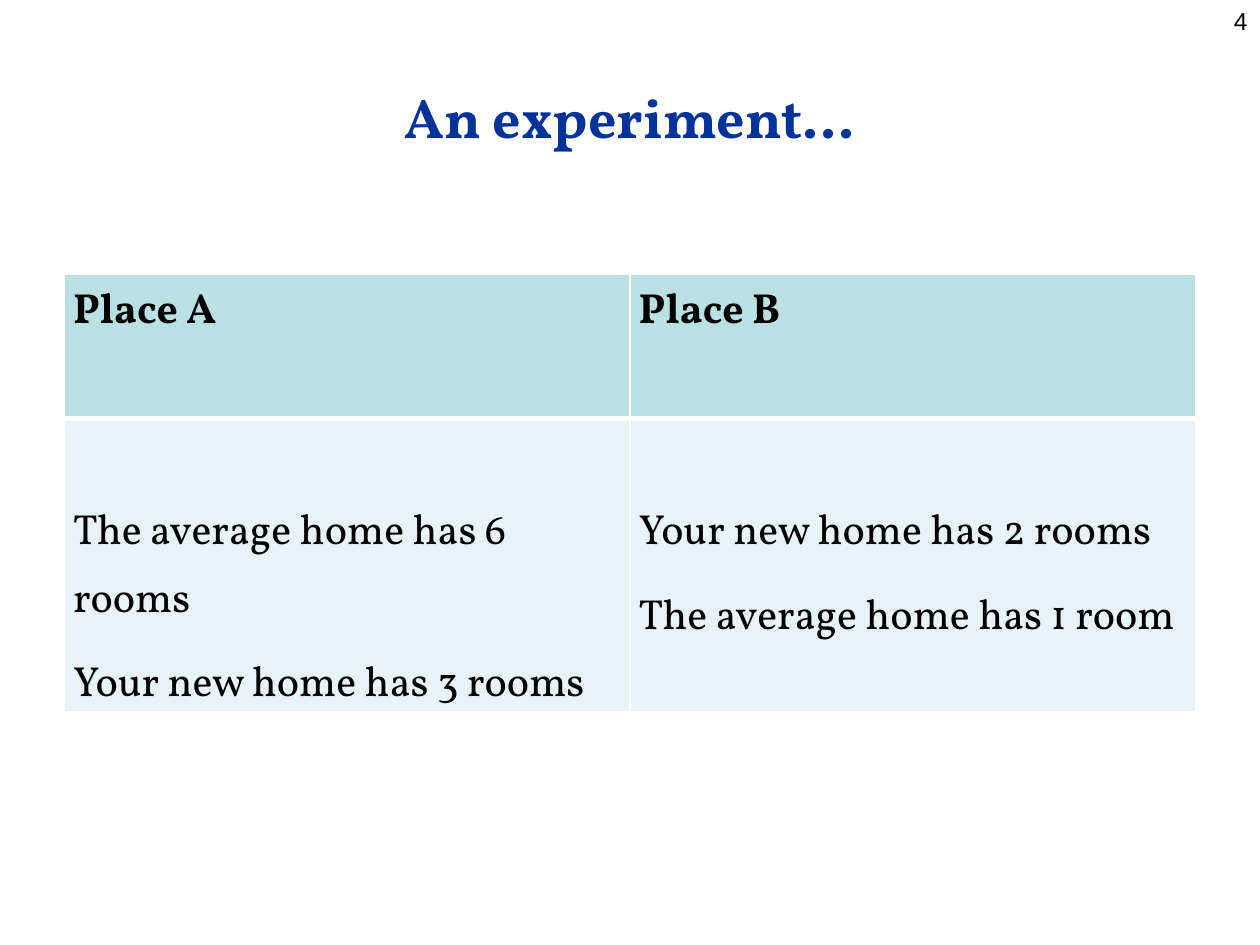
import pptx
import pptx.util
import pptx.dml.color
import pptx.enum.text
import pptx.oxml
import pptx.oxml.ns
from pptx.util import Inches

WHITE = pptx.dml.color.RGBColor(0xFF, 0xFF, 0xFF)
BLACK = pptx.dml.color.RGBColor(0, 0, 0)
TITLE_BLUE = pptx.dml.color.RGBColor(0x00, 0x33, 0x99)
HEADER_TEAL = pptx.dml.color.RGBColor(0xBB, 0xE0, 0xE3)
BODY_TEAL = pptx.dml.color.RGBColor(0xE7, 0xF3, 0xF4)
ALIGN = pptx.enum.text.PP_ALIGN
ANCHOR = pptx.enum.text.MSO_ANCHOR

PLACES = [
    ("Place A", ["The average home has 6 rooms", "Your new home has 3 rooms"]),
    ("Place B", ["Your new home has 2 rooms", "The average home has 1 room"]),
]


def set_font(p, size, color, name="Vollkorn", bold=False):
    p.font.size = pptx.util.Pt(size)
    p.font.name = name
    p.font.bold = bold
    p.font.color.rgb = color


def add_title(s, text, left, top, width, height):
    sp = s.shapes.title
    sp.left, sp.top, sp.width, sp.height = left, top, width, height
    tf = sp.text_frame
    tf.text = text
    tf.vertical_anchor = ANCHOR.MIDDLE
    p = tf.paragraphs[0]
    p.alignment = ALIGN.CENTER
    set_font(p, 32, TITLE_BLUE, bold=True)


def add_page_number(s, number, left, top, width, height):
    tf = s.shapes.add_textbox(left, top, width, height).text_frame
    tf.word_wrap = True
    p = tf.paragraphs[0]
    p.text = str(number)
    p.alignment = ALIGN.RIGHT
    set_font(p, 14, BLACK, "Arial")


def set_borders(cell, widths):
    """Draw white borders; widths maps a side (L, R, T, B) to points."""
    tcPr = cell._tc.get_or_add_tcPr()
    for i, (side, width) in enumerate(widths.items()):
        ln = pptx.oxml.parse_xml(
            f'<a:ln{side} {pptx.oxml.ns.nsdecls("a")} w="{pptx.util.Pt(width)}">'
            f'<a:solidFill><a:srgbClr val="{WHITE}"/></a:solidFill></a:ln{side}>')
        tcPr.insert(i, ln)


def fill_cell(cell, lines, fill, bold, top_margin):
    cell.fill.solid()
    cell.fill.fore_color.rgb = fill
    cell.margin_left = cell.margin_right = Inches(0.07)
    cell.margin_top, cell.margin_bottom = top_margin, 0
    tf = cell.text_frame
    tf.text = "\n".join(lines)
    for p in tf.paragraphs:
        p.line_spacing = 1.15
        p.space_after = pptx.util.Pt(10)
        set_font(p, 24, BLACK, bold=bold)


def add_comparison(s, places, left, top, width, height):
    table = s.shapes.add_table(2, len(places), left, top, width, height).table
    header_height = Inches(1.14)
    table.rows[0].height = header_height
    table.rows[1].height = height - header_height
    for col, (name, facts) in enumerate(places):
        header, body = table.cell(0, col), table.cell(1, col)
        fill_cell(header, [name], HEADER_TEAL, True, 0)
        fill_cell(body, facts, BODY_TEAL, False, Inches(0.62))
        set_borders(header, {"L": 1, "R": 1, "T": 1, "B": 3})
        set_borders(body, {"L": 1, "R": 1, "T": 3, "B": 1})


def main():
    prs = pptx.Presentation()
    prs.slide_width, prs.slide_height = Inches(10), Inches(7.5)
    s = prs.slides.add_slide(prs.slide_layouts[5])  # title only
    s.background.fill.solid()
    s.background.fill.fore_color.rgb = WHITE

    # Page number, title and comparison table
    add_page_number(s, 4, Inches(7.67), 0, Inches(2.33), Inches(0.52))
    add_title(s, "An experiment...", Inches(0.5), Inches(0.3), Inches(9), Inches(1.25))
    add_comparison(s, PLACES, Inches(0.51), Inches(2.18), Inches(8.98), Inches(3.47))
    prs.save("out.pptx")


if __name__ == "__main__":
    main()
